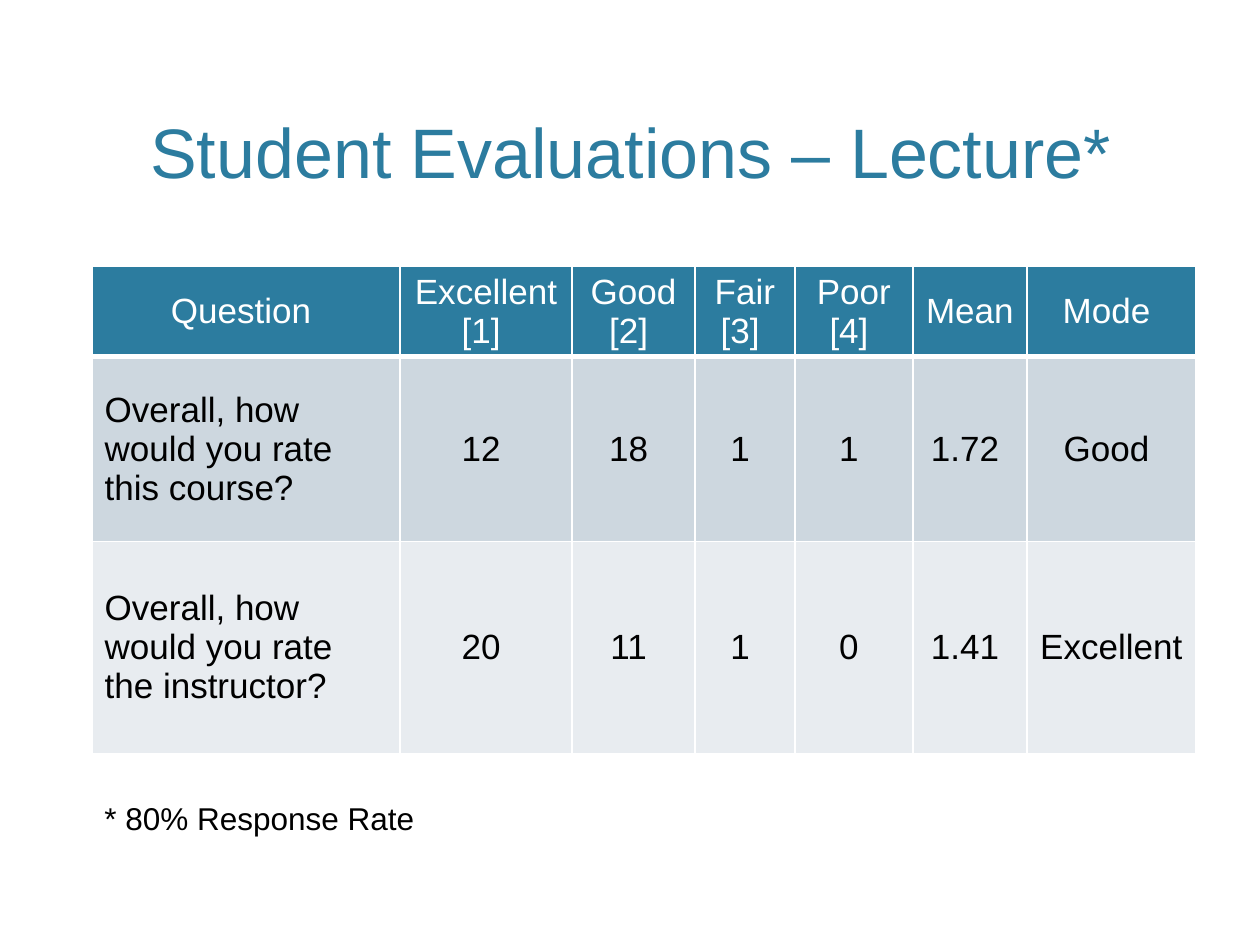
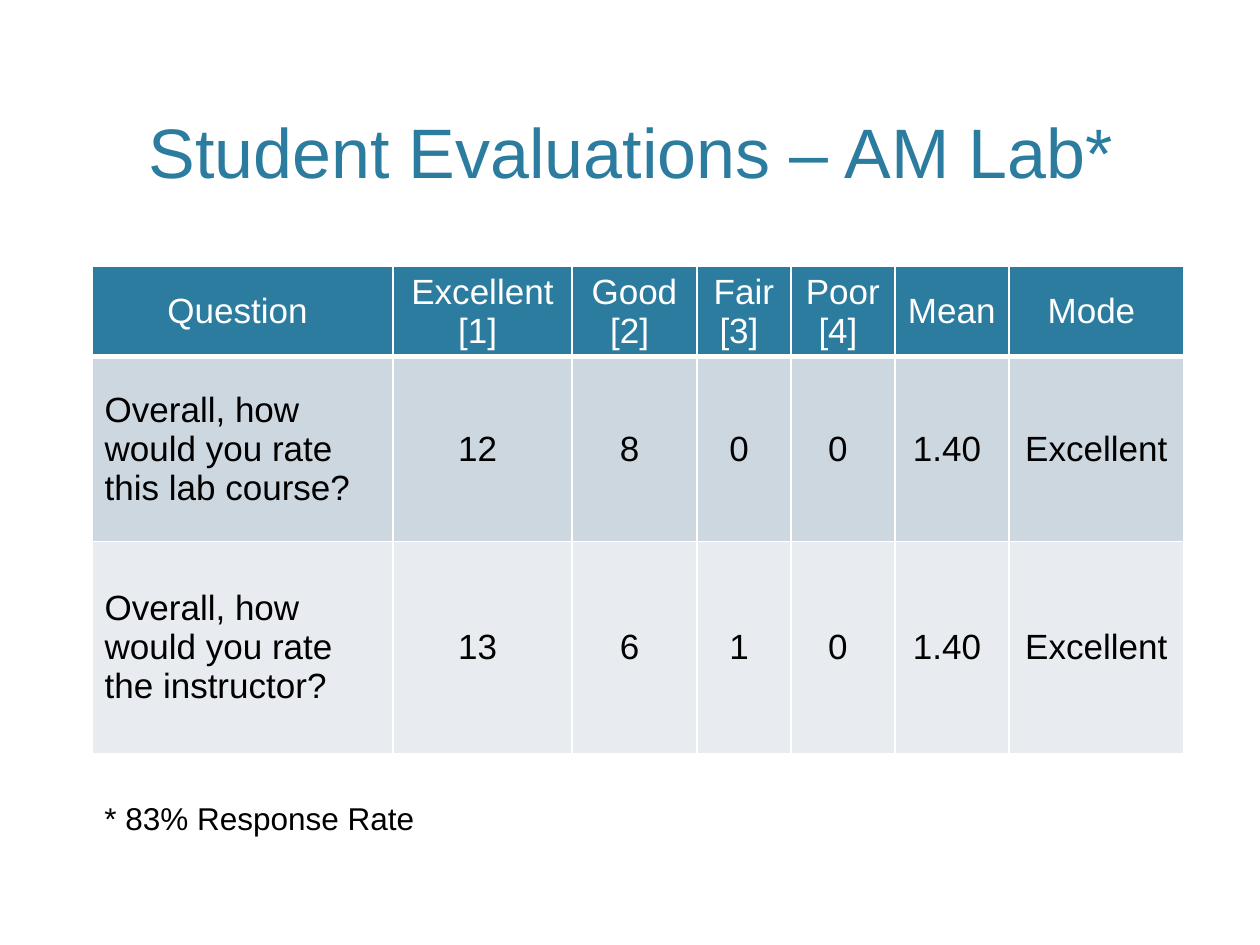
from dataclasses import dataclass

from lxml import etree
from pptx import Presentation
from pptx.dml.color import RGBColor
from pptx.enum.text import MSO_ANCHOR, MSO_AUTO_SIZE, PP_ALIGN
from pptx.oxml.ns import qn
from pptx.util import Emu, Pt

LEFT, CENTER = PP_ALIGN.LEFT, PP_ALIGN.CENTER
TOP, MIDDLE, BOTTOM = MSO_ANCHOR.TOP, MSO_ANCHOR.MIDDLE, MSO_ANCHOR.BOTTOM
NO_AUTOFIT, FIT_SHAPE = MSO_AUTO_SIZE.NONE, MSO_AUTO_SIZE.SHAPE_TO_FIT_TEXT

PX_PER_INCH = 126
EMU_PER_PX = 914400 / PX_PER_INCH
TITLE_ONLY = 5

FONT = "Arial"
BLUE = "2C7C9F"
WHITE = "FFFFFF"
BLACK = "000000"
ROW_FILLS = (BLUE, "CDD7DF", "E8ECF0")

TITLE_BOX = (76, 15, 1109, 184)
TABLE_LEFT, TABLE_TOP = 92, 266
ROW_HEIGHTS = (90, 185, 212)
NOTE_BOX = (92, 793, 352, 50)
THIN_BORDER, HEADER_BORDER = 1, 3

HEADERS = ("Question ", "Excellent [1] ", "Good [2] ", "Fair [3] ",
           "Poor [4] ", "Mean ", "Mode ")


@dataclass(frozen=True)
class Rating:
    question: str
    counts: tuple[int, int, int, int]
    mean: str
    mode: str

    def texts(self) -> tuple[str, ...]:
        values = (*self.counts, self.mean, self.mode)
        return (self.question, *(f"{value} " for value in values))


@dataclass(frozen=True)
class Evaluation:
    session: str
    response_rate: int
    column_widths: tuple[int, ...]
    ratings: tuple[Rating, Rating]


EVALUATIONS = (
    Evaluation("Lecture", 80, (308, 172, 123, 100, 118, 114, 169), (
        Rating("Overall, how would you rate this course?",
               (12, 18, 1, 1), "1.72", "Good"),
        Rating("Overall, how would you rate the instructor?",
               (20, 11, 1, 0), "1.41", "Excellent"),
    )),
    Evaluation("AM Lab", 83, (301, 179, 125, 94, 104, 114, 175), (
        Rating("Overall, how would you rate this lab course?",
               (12, 8, 0, 0), "1.40", "Excellent"),
        Rating("Overall, how would you rate the instructor?",
               (13, 6, 1, 0), "1.40", "Excellent"),
    )),
)


def px(length: int) -> Emu:
    return Emu(round(length * EMU_PER_PX))


def color(value: str) -> RGBColor:
    return RGBColor.from_string(value)


def write_text(text_frame, text: str, *, size: int, fill: str = BLACK,
               align=LEFT, anchor=TOP) -> None:
    text_frame.vertical_anchor = anchor
    paragraph = text_frame.paragraphs[0]
    paragraph.alignment = align
    run = paragraph.add_run()
    run.text = text
    run.font.name = FONT
    run.font.size = Pt(size)
    run.font.bold = False
    run.font.color.rgb = color(fill)


def set_border(cell, side: str, width: int) -> None:
    properties = cell._tc.get_or_add_tcPr()
    line = etree.SubElement(properties, qn(f"a:ln{side}"), w=str(Pt(width)))
    solid = etree.SubElement(line, qn("a:solidFill"))
    etree.SubElement(solid, qn("a:srgbClr"), val=WHITE)


def format_cell(cell, text: str, row: int, column: int) -> None:
    is_header = row == 0
    borders = {
        "L": THIN_BORDER,
        "R": THIN_BORDER,
        "T": HEADER_BORDER if row == 1 else THIN_BORDER,
        "B": HEADER_BORDER if is_header else THIN_BORDER,
    }
    for side, width in borders.items():
        set_border(cell, side, width)
    cell.fill.solid()
    cell.fill.fore_color.rgb = color(ROW_FILLS[row])
    cell.vertical_anchor = MIDDLE
    write_text(cell.text_frame, text, size=20, anchor=MIDDLE,
               fill=WHITE if is_header else BLACK,
               align=CENTER if is_header or column else LEFT)


def add_title(slide, text: str) -> None:
    title = slide.shapes.title
    title.left, title.top, title.width, title.height = map(px, TITLE_BOX)
    title.text_frame.auto_size = NO_AUTOFIT
    write_text(title.text_frame, text, size=40, fill=BLUE,
               align=CENTER, anchor=BOTTOM)


def add_ratings_table(slide, evaluation: Evaluation) -> None:
    rows = (HEADERS, *(rating.texts() for rating in evaluation.ratings))
    widths = evaluation.column_widths
    bounds = (TABLE_LEFT, TABLE_TOP, sum(widths), sum(ROW_HEIGHTS))
    table = slide.shapes.add_table(len(rows), len(HEADERS), *map(px, bounds)).table
    table.horz_banding = False
    for column, width in zip(table.columns, widths):
        column.width = px(width)
    for row, height in zip(table.rows, ROW_HEIGHTS):
        row.height = px(height)
    for row_index, texts in enumerate(rows):
        for column_index, text in enumerate(texts):
            cell = table.cell(row_index, column_index)
            format_cell(cell, text, row_index, column_index)


def add_note(slide, text: str) -> None:
    note = slide.shapes.add_textbox(*map(px, NOTE_BOX))
    note.text_frame.word_wrap = False
    note.text_frame.auto_size = FIT_SHAPE
    write_text(note.text_frame, text, size=18)


def add_evaluation_slide(presentation, evaluation: Evaluation) -> None:
    slide = presentation.slides.add_slide(presentation.slide_layouts[TITLE_ONLY])
    add_title(slide, f"Student Evaluations – {evaluation.session}*")
    add_ratings_table(slide, evaluation)
    add_note(slide, f"* {evaluation.response_rate}% Response Rate")


def main() -> None:
    presentation = Presentation()
    presentation.slide_width = px(1260)
    presentation.slide_height = px(945)
    for evaluation in EVALUATIONS:
        add_evaluation_slide(presentation, evaluation)
    presentation.save("out.pptx")


if __name__ == "__main__":
    main()
